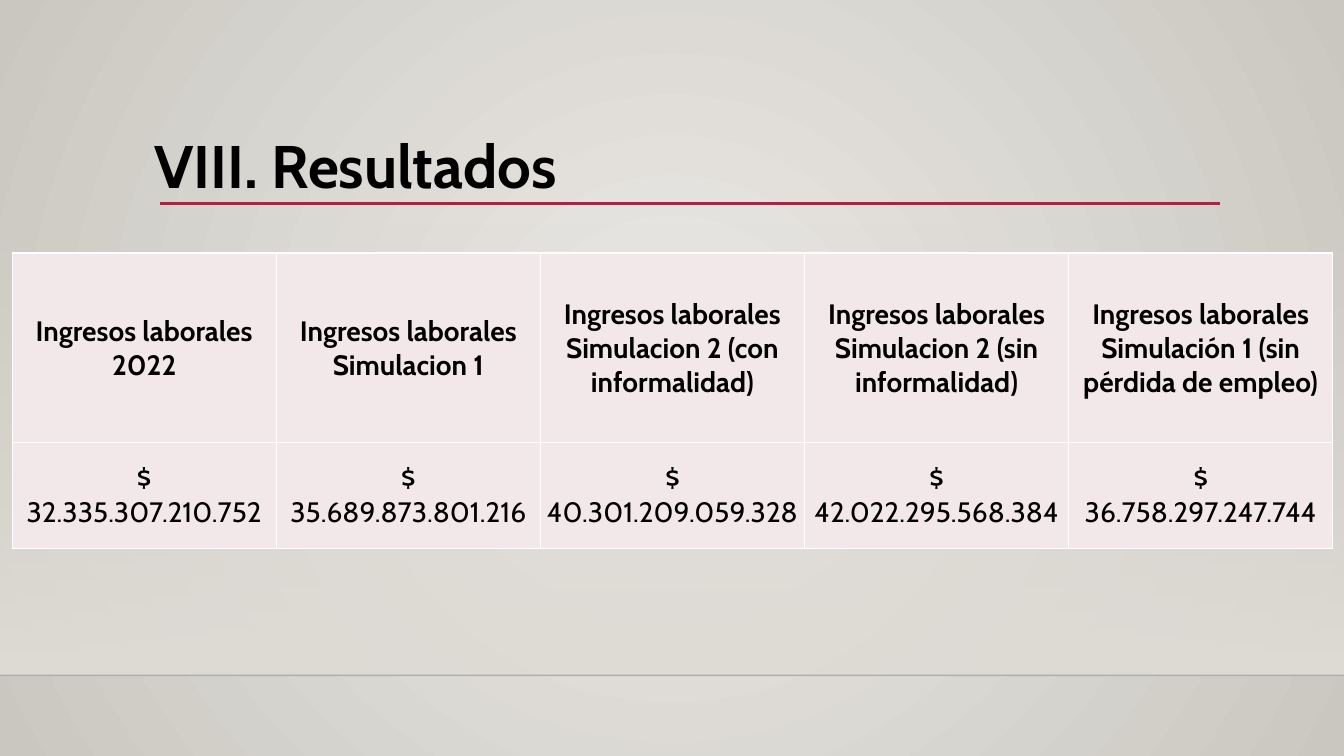
from dataclasses import dataclass

from lxml import etree
from pptx import Presentation
from pptx.dml.color import RGBColor
from pptx.enum.shapes import MSO_CONNECTOR, MSO_SHAPE
from pptx.enum.text import MSO_ANCHOR, MSO_AUTO_SIZE, PP_ALIGN
from pptx.oxml.ns import qn
from pptx.util import Pt

# Scale: 100 px to the inch
EMU_PER_PX = 9144
PAGE_WIDTH, PAGE_HEIGHT = 1333, 750

FONT = "Cabin"
BLACK = RGBColor(0x00, 0x00, 0x00)
WHITE = RGBColor(0xFF, 0xFF, 0xFF)
CRIMSON = RGBColor(0xB7, 0x1E, 0x42)
FLOOR_EDGE = RGBColor(0x00, 0x00, 0x01)
CENTRE_GREY = RGBColor(0xEC, 0xEA, 0xE7)
OUTER_GREY = RGBColor(0xCA, 0xC7, 0xC1)
BAND_GREY = RGBColor(0xDF, 0xDB, 0xD5)
CELL_PINK = RGBColor(0xF3, 0xE8, 0xE9)

RECTANGLE = MSO_SHAPE.RECTANGLE
STRAIGHT = MSO_CONNECTOR.STRAIGHT
MIDDLE = MSO_ANCHOR.MIDDLE
NO_AUTO_SIZE = MSO_AUTO_SIZE.NONE
LEFT, CENTER = PP_ALIGN.LEFT, PP_ALIGN.CENTER

TITLE_ONLY_LAYOUT = 5
COLUMN_WIDTH = 262
ROW_HEIGHTS = (188, 105)


@dataclass(frozen=True)
class Rule:
    left: int
    right: int
    top: int
    color: RGBColor
    points: float
    opacity: int = 100


@dataclass(frozen=True)
class Income:
    heading: str
    amount: str


RULES = (
    Rule(0, PAGE_WIDTH, 670, FLOOR_EDGE, 1, opacity=20),
    Rule(159, 1210, 202, CRIMSON, 2.5),
)

INCOMES = (
    Income("Ingresos laborales 2022", "32.335.307.210.752"),
    Income("Ingresos laborales Simulacion 1", "35.689.873.801.216"),
    Income("Ingresos laborales Simulacion 2 (con informalidad)", "40.301.209.059.328"),
    Income("Ingresos laborales Simulacion 2 (sin informalidad)", "42.022.295.568.384"),
    Income("Ingresos laborales Simulación 1 (sin pérdida de empleo)", "36.758.297.247.744"),
)


def px(length: int) -> int:
    return length * EMU_PER_PX


def set_stops(fill, *colors: RGBColor) -> None:
    fill.gradient()
    for stop, color in zip(fill.gradient_stops, colors):
        stop.color.rgb = color


def set_alpha(color_element, percent: int) -> None:
    etree.SubElement(color_element, qn("a:alpha"), val=str(percent * 1000))


def add_text(para, text: str, size: float, bold: bool) -> None:
    span = para.add_run()
    span.text = text
    span.font.name = FONT
    span.font.size = Pt(size)
    span.font.bold = bold
    span.font.color.rgb = BLACK


def paint_background(page) -> None:
    set_stops(page.background.fill, CENTRE_GREY, OUTER_GREY)
    linear = next(page.background._cSld.iter(qn("a:lin")))
    circle = etree.Element(qn("a:path"), path="circle")
    etree.SubElement(circle, qn("a:fillToRect"), l="50000", t="50000", r="50000", b="50000")
    linear.getparent().replace(linear, circle)


def draw_band(page) -> None:
    band = page.shapes.add_shape(RECTANGLE, 0, px(221), px(PAGE_WIDTH), px(449))
    band.shadow.inherit = False
    band.line.fill.background()
    set_stops(band.fill, BAND_GREY, BAND_GREY)
    band.fill.gradient_angle = 270
    set_alpha(next(band._element.iter(qn("a:srgbClr"))), 0)


def draw_rule(page, rule: Rule) -> None:
    line = page.shapes.add_connector(
        STRAIGHT, px(rule.left), px(rule.top), px(rule.right), px(rule.top))
    line.line.color.rgb = rule.color
    line.line.width = Pt(rule.points)
    if rule.opacity < 100:
        set_alpha(next(line._element.iter(qn("a:srgbClr"))), rule.opacity)
    etree.SubElement(line._element.spPr, qn("a:effectLst"))


def write_title(page, text: str) -> None:
    title = page.shapes.title
    title.left, title.top, title.width, title.height = px(143), px(134), px(1190), px(71)
    frame = title.text_frame
    frame.auto_size = NO_AUTO_SIZE
    frame.word_wrap = True
    frame.vertical_anchor = MIDDLE
    para = frame.paragraphs[0]
    para.alignment = LEFT
    para.line_spacing = 0.8
    add_text(para, text, 42.9, True)


def format_cell(cell) -> None:
    cell.margin_left = cell.margin_right = cell.margin_top = px(1)
    cell.margin_bottom = 0
    cell.vertical_anchor = MIDDLE
    cell.text_frame.paragraphs[0].alignment = CENTER
    properties = cell._tc.get_or_add_tcPr()
    for side in ("L", "R", "T", "B"):
        border = etree.SubElement(properties, qn(f"a:ln{side}"), w=str(Pt(1)))
        fill = etree.SubElement(border, qn("a:solidFill"))
        etree.SubElement(fill, qn("a:srgbClr"), val=str(WHITE))
    cell.fill.solid()
    cell.fill.fore_color.rgb = CELL_PINK


def draw_table(page) -> None:
    box = page.shapes.add_table(
        len(ROW_HEIGHTS), len(INCOMES), px(12), px(251),
        px(COLUMN_WIDTH * len(INCOMES)), px(sum(ROW_HEIGHTS)))
    table = box.table
    table.first_row = table.horz_banding = False
    for row, height in zip(table.rows, ROW_HEIGHTS):
        row.height = px(height)
    for column in table.columns:
        column.width = px(COLUMN_WIDTH)
    for cell in table.iter_cells():
        format_cell(cell)
    for index, income in enumerate(INCOMES):
        heading, amount = (table.cell(row, index).text_frame.paragraphs[0] for row in (0, 1))
        add_text(heading, income.heading, 20, True)
        add_text(amount, "$", 20, False)
        amount.add_line_break()
        add_text(amount, income.amount, 20, False)


def main() -> None:
    deck = Presentation()
    deck.slide_width, deck.slide_height = px(PAGE_WIDTH), px(PAGE_HEIGHT)
    page = deck.slides.add_slide(deck.slide_layouts[TITLE_ONLY_LAYOUT])

    # Backdrop
    paint_background(page)
    draw_band(page)
    for rule in RULES:
        draw_rule(page, rule)

    # Content
    write_title(page, "VIII. Resultados")
    draw_table(page)
    deck.save("out.pptx")


if __name__ == "__main__":
    main()
